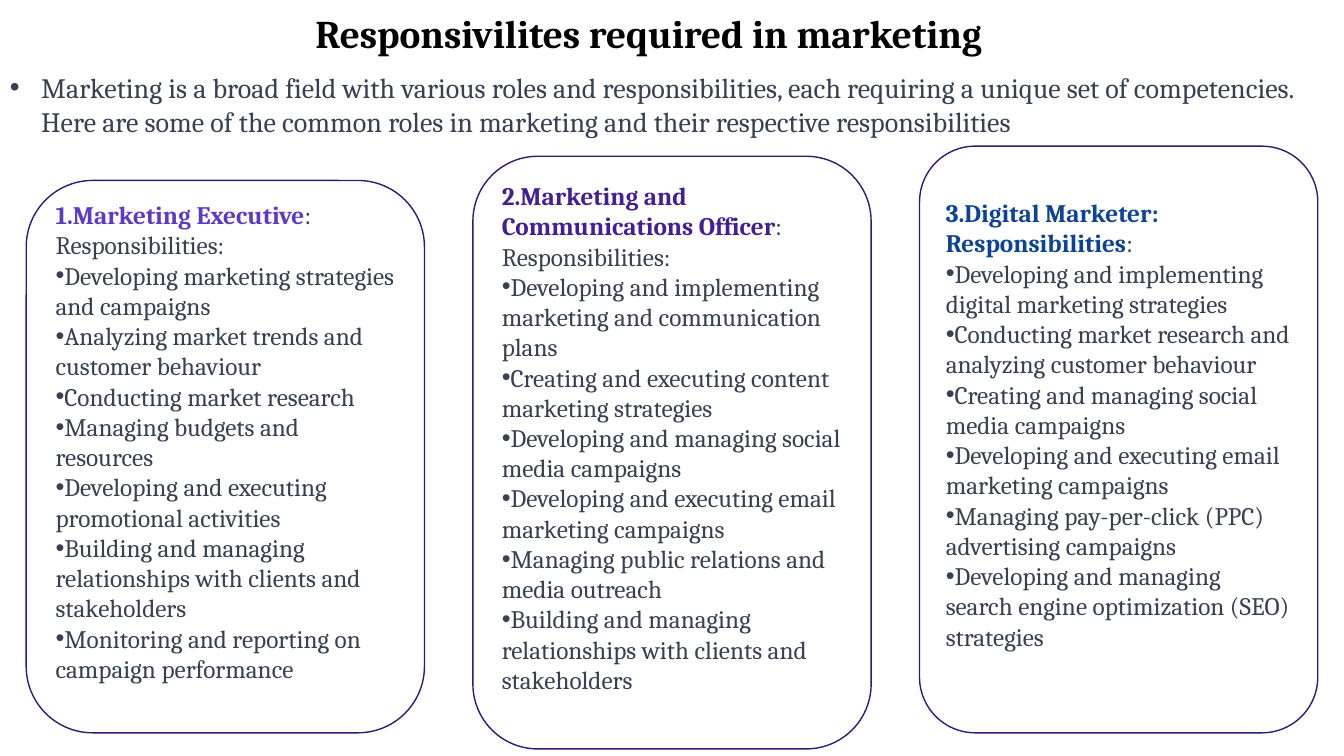
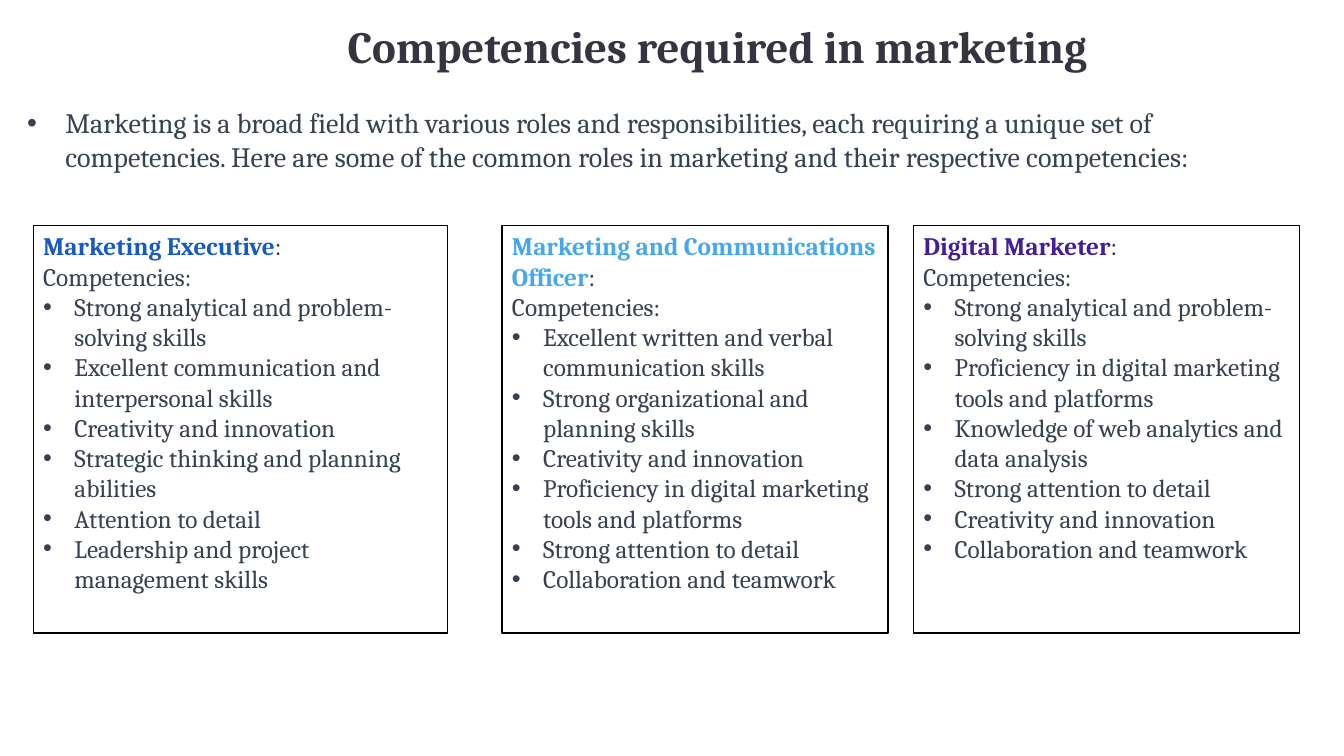
from pptx import Presentation
from pptx.dml.color import RGBColor
from pptx.enum.shapes import MSO_SHAPE as Shape
from pptx.enum.text import MSO_ANCHOR as Anchor, PP_ALIGN as Align
from pptx.oxml.xmlchemy import OxmlElement
from pptx.util import Inches, Pt

FONT = "Cambria"
WHITE = RGBColor(0xFF, 0xFF, 0xFF)
BLACK = RGBColor(0x00, 0x00, 0x00)
CHARCOAL = RGBColor(0x34, 0x35, 0x41)
SLATE = RGBColor(0x37, 0x41, 0x51)
OUTLINE = RGBColor(0x35, 0x18, 0x76)
VIOLET = RGBColor(0x5C, 0x3A, 0xC7)
PURPLE = RGBColor(0x43, 0x1E, 0x96)
NAVY = RGBColor(0x0D, 0x43, 0x93)
BLUE = RGBColor(0x16, 0x5A, 0xC4)
SKY = RGBColor(0x45, 0xA7, 0xEE)

INTRO = ("Marketing is a broad field with various roles and responsibilities, each requiring "
         "a unique set of competencies. Here are some of the common roles in marketing and "
         "their respective ")

SLIDES = [
    {
        "title": ("Responsivilites required in marketing", 28, BLACK, (3.03, 0.04, 7.02, 0.57)),
        "intro": (INTRO + "responsibilities", 0.31, (0, 0.65, 13.18, 0.77)),
        "shape": Shape.ROUNDED_RECTANGLE, "line": OUTLINE, "anchor": Anchor.MIDDLE,
        "bottom": 0.35, "indent": 0, "numbered": True,
        "boxes": [
            ((0.26, 1.79, 3.95, 5.48), 0.167, VIOLET,
             "Marketing Executive", [": Responsibilities:"],
             ["Developing marketing strategies and campaigns",
              "Analyzing market trends and customer behaviour",
              "Conducting market research",
              "Managing budgets and resources",
              "Developing and executing promotional activities",
              "Building and managing relationships with clients and stakeholders",
              "Monitoring and reporting on campaign performance"]),
            ((4.69, 1.55, 3.95, 5.88), 0.163, PURPLE,
             "Marketing and Communications Officer", [": Responsibilities:"],
             ["Developing and implementing marketing and communication plans",
              "Creating and executing content marketing strategies",
              "Developing and managing social media campaigns",
              "Developing and executing email marketing campaigns",
              "Managing public relations and media outreach",
              "Building and managing relationships with clients and stakeholders"]),
            ((9.12, 1.45, 3.95, 5.82), 0.14, NAVY,
             "Digital Marketer: Responsibilities", [":"],
             ["Developing and implementing digital marketing strategies",
              "Conducting market research and analyzing customer behaviour",
              "Creating and managing social media campaigns",
              "Developing and executing email marketing campaigns",
              "Managing pay-per-click (PPC) advertising campaigns",
              "Developing and managing search engine optimization (SEO) strategies"]),
        ],
    },
    {
        "title": ("Competencies required in marketing", 32, CHARCOAL, (3.35, 0.14, 7.77, 0.64)),
        "intro": (INTRO + "competencies:", 0.38, (0.17, 1, 12.33, 0.77)),
        "shape": Shape.RECTANGLE, "line": BLACK, "anchor": Anchor.TOP,
        "bottom": 0.05, "indent": 0.31, "numbered": False,
        "boxes": [
            ((0.33, 2.24, 4.11, 4.04), None, BLUE,
             "Marketing Executive", [":", "Competencies:"],
             ["Strong analytical and problem-solving skills",
              "Excellent communication and interpersonal skills",
              "Creativity and innovation",
              "Strategic thinking and planning abilities",
              "Attention to detail",
              "Leadership and project management skills"]),
            ((4.98, 2.24, 3.83, 4.04), None, SKY,
             "Marketing and Communications Officer", [":", "Competencies:"],
             ["Excellent written and verbal communication skills",
              "Strong organizational and planning skills",
              "Creativity and innovation",
              "Proficiency in digital marketing tools and platforms",
              "Strong attention to detail",
              "Collaboration and teamwork"]),
            ((9.06, 2.24, 3.83, 4.04), None, PURPLE,
             "Digital Marketer", [":", "Competencies:"],
             ["Strong analytical and problem-solving skills",
              "Proficiency in digital marketing tools and platforms",
              "Knowledge of web analytics and data analysis",
              "Strong attention to detail",
              "Creativity and innovation",
              "Collaboration and teamwork"]),
        ],
    },
]


def add_text(frame, runs, size, indent=0, bullet=None, number=None):
    """Write runs of (text, colour, bold) as the next paragraph, with an optional bullet or number."""
    paragraph = frame.paragraphs[0]
    if paragraph.runs:
        paragraph = frame.add_paragraph()
    paragraph.alignment = Align.LEFT
    properties = paragraph._p.get_or_add_pPr()
    properties.set("marL", str(Inches(indent)))
    properties.set("indent", str(-Inches(indent)))
    markers = []
    if bullet:
        markers = [("a:buFont", {"typeface": "Arial"}), ("a:buChar", {"char": bullet})]
    elif number:
        markers = [("a:buFont", {"typeface": FONT}),
                   ("a:buAutoNum", {"type": "arabicPeriod", "startAt": str(number)})]
    for tag, attributes in markers:
        marker = OxmlElement(tag)
        for name, value in attributes.items():
            marker.set(name, value)
        properties.append(marker)
    for text, colour, bold in runs:
        run = paragraph.add_run()
        run.text = text
        for name, value in {"name": FONT, "size": Pt(size), "bold": bold}.items():
            setattr(run.font, name, value)
        run.font.color.rgb = colour


def add_text_box(slide, place):
    frame = slide.shapes.add_textbox(*map(Inches, place)).text_frame
    frame.word_wrap = True
    return frame


presentation = Presentation()
presentation.slide_width = Inches(13.33)
presentation.slide_height = Inches(7.5)

for content in SLIDES:
    slide = presentation.slides.add_slide(presentation.slide_layouts[6])

    for place, corner, colour, role, labels, items in content["boxes"]:
        shape = slide.shapes.add_shape(content["shape"], *map(Inches, place))
        shape.shadow.inherit = False
        if corner:
            shape.adjustments[0] = corner
        shape.fill.solid()
        shape.fill.fore_color.rgb = WHITE
        shape.line.color.rgb = content["line"]
        shape.line.width = Pt(1)
        frame = shape.text_frame
        frame_format = {"word_wrap": True, "vertical_anchor": content["anchor"],
                        "margin_bottom": Inches(content["bottom"])}
        for name, value in frame_format.items():
            setattr(frame, name, value)

        number = content["boxes"].index((place, corner, colour, role, labels, items)) + 1
        add_text(frame, [(role, colour, True), (labels[0], SLATE, False)], 18,
                 number=number if content["numbered"] else None)
        for label in labels[1:]:
            add_text(frame, [(label, SLATE, False)], 18)
        for item in items:
            add_text(frame, [(item, SLATE, False)], 18, content["indent"], bullet="•")

    title, size, colour, place = content["title"]
    add_text(add_text_box(slide, place), [(title, colour, True)], size)

    intro, indent, place = content["intro"]
    add_text(add_text_box(slide, place), [(intro, SLATE, False)], 20, indent, bullet="•")

presentation.save("out.pptx")
